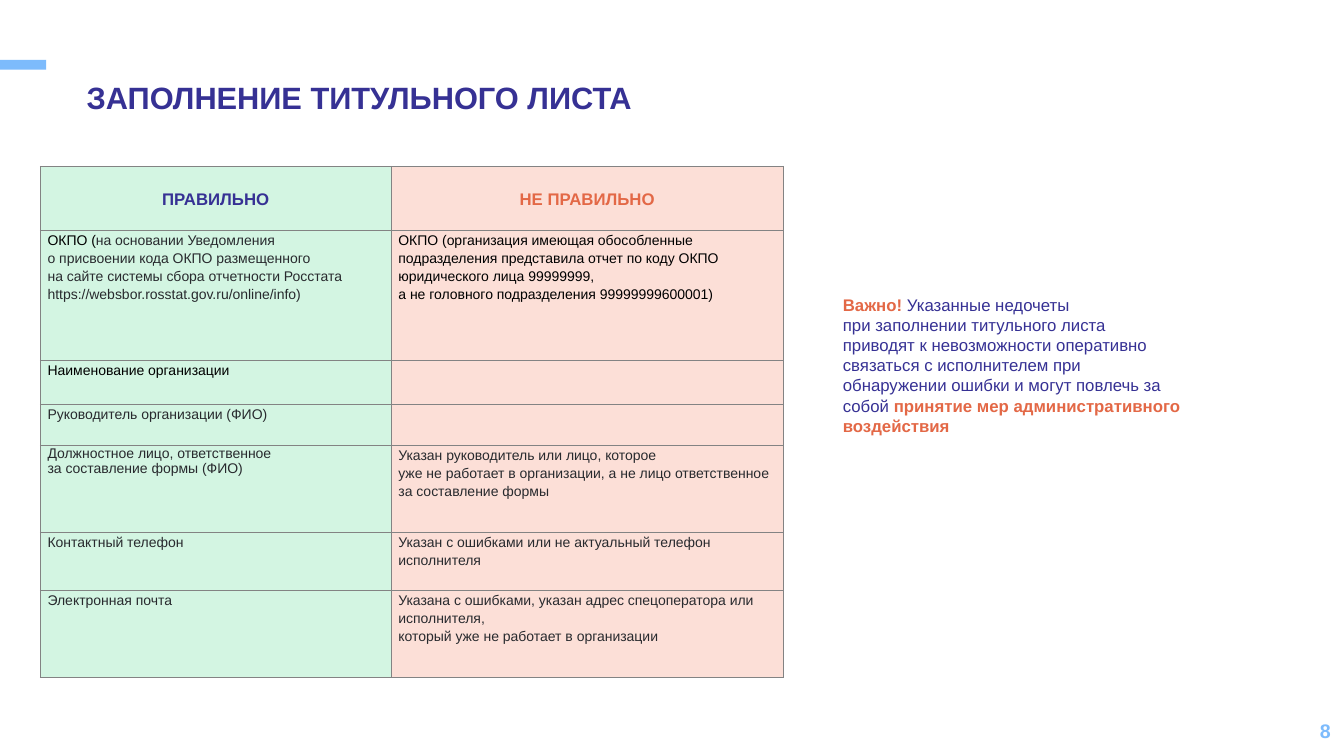
from pptx import Presentation
from pptx.dml.color import RGBColor
from pptx.enum.shapes import MSO_SHAPE
from pptx.enum.text import MSO_ANCHOR, PP_ALIGN
from pptx.oxml import parse_xml
from pptx.oxml.ns import nsdecls
from pptx.util import Pt

FONT = "Arial"
NAVY, ORANGE, SKY = "363194", "E36846", "7DBBFC"
BLACK, DARK, GREY = "000000", "282A2E", "838383"
GREEN, PINK = "D3F5E2", "FCDFD7"

COL_WIDTHS = [250.6, 280.1]
ROW_HEIGHTS = [46.1, 92.9, 31, 29.5, 61.9, 41.8, 61.9]
ROWS = [
    ([("ОКПО (", BLACK),
      ("на основании Уведомления\nо присвоении кода ОКПО размещенного\n"
       "на сайте системы сбора отчетности Росстата "
       "https://websbor.rosstat.gov.ru/online/info)", DARK)],
     [("ОКПО (организация имеющая обособленные подразделения представила "
       "отчет по коду ОКПО юридического лица 99999999,\n"
       "а не головного подразделения 99999999600001)", BLACK)]),
    ([("Наименование организации", BLACK)], []),
    ([("Руководитель организации (ФИО)", DARK)], []),
    ([("Должностное лицо, ответственное\nза составление формы (ФИО)", DARK)],
     [("Указан руководитель или лицо, которое\nуже не работает в организации, "
       "а не лицо ответственное за составление формы", DARK)]),
    ([("Контактный телефон", DARK)],
     [("Указан с ошибками или не актуальный телефон исполнителя", DARK)]),
    ([("Электронная почта", DARK)],
     [("Указана с ошибками, указан адрес спецоператора или исполнителя,\n"
       "который уже не работает в организации", DARK)]),
]


def rgb(value):
    return RGBColor.from_string(value)


def add_text(p, text, size=10, color=DARK, bold=False):
    for i, line in enumerate(text.split("\n")):
        if i:
            p.add_line_break()
        r = p.add_run()
        r.text = line
        r.font.name = FONT
        r.font.size = Pt(size)
        r.font.bold = bold
        r.font.color.rgb = rgb(color)


def place(sp, left, top, width, height):
    sp.left, sp.top, sp.width, sp.height = map(Pt, (left, top, width, height))


def add_title(s, text):
    sp = s.shapes.title
    place(sp, 54.7, 52.6, 590.4, 33.8)
    tf = sp.text_frame
    tf.word_wrap = True
    tf.vertical_anchor = MSO_ANCHOR.TOP
    p = tf.paragraphs[0]
    p.alignment = PP_ALIGN.LEFT
    add_text(p, text, size=22, color=NAVY, bold=True)


def add_bar(s):
    sp = s.shapes.add_shape(MSO_SHAPE.RECTANGLE, 0, Pt(42.8), Pt(33), Pt(6.9))
    sp.shadow.inherit = False
    sp.fill.solid()
    sp.fill.fore_color.rgb = rgb(SKY)
    sp.line.fill.background()


def add_box(s, box, runs, align=PP_ALIGN.LEFT, anchor=MSO_ANCHOR.TOP):
    sp = s.shapes.add_textbox(*map(Pt, box))
    tf = sp.text_frame
    tf.word_wrap = True
    tf.vertical_anchor = anchor
    p = tf.paragraphs[0]
    p.alignment = align
    for text, style in runs:
        add_text(p, text, **style)


def set_borders(cell, color, width):
    tcPr = cell._tc.get_or_add_tcPr()
    for i, side in enumerate(("lnL", "lnR", "lnT", "lnB")):
        tcPr.insert(i, parse_xml(
            f'<a:{side} {nsdecls("a")} w="{Pt(width)}"><a:solidFill>'
            f'<a:srgbClr val="{color}"/></a:solidFill></a:{side}>'))


def fill_cell(cell, runs, fill, header=False, spacing=1.15):
    cell.fill.solid()
    cell.fill.fore_color.rgb = rgb(fill)
    set_borders(cell, GREY, 0.75)
    cell.margin_left = cell.margin_right = Pt(5.2)
    cell.margin_top = cell.margin_bottom = 0
    cell.vertical_anchor = MSO_ANCHOR.MIDDLE if header else MSO_ANCHOR.TOP
    p = cell.text_frame.paragraphs[0]
    p.font.size = Pt(10)
    p.line_spacing = spacing
    if header:
        p.alignment = PP_ALIGN.CENTER
    for text, color in runs:
        add_text(p, text, size=12 if header else 10, color=color, bold=header)


def add_comparison(s):
    frame = s.shapes.add_table(len(ROW_HEIGHTS), 2, Pt(28.8), Pt(118.8),
                               Pt(sum(COL_WIDTHS)), Pt(sum(ROW_HEIGHTS)))
    table = frame.table
    for col, width in zip(table.columns, COL_WIDTHS):
        col.width = Pt(width)
    for row, height in zip(table.rows, ROW_HEIGHTS):
        row.height = Pt(height)
    header = ([("ПРАВИЛЬНО", NAVY)], [("НЕ ПРАВИЛЬНО", ORANGE)])
    for i, row in enumerate([header] + ROWS):
        for j, (runs, fill) in enumerate(zip(row, (GREEN, PINK))):
            spacing = 1.0 if (i, j) == (4, 0) else 1.15
            fill_cell(table.cell(i, j), runs, fill, i == 0, spacing)


def main():
    prs = Presentation()
    prs.slide_width, prs.slide_height = Pt(960), Pt(540)
    s = prs.slides.add_slide(prs.slide_layouts[5])
    add_bar(s)
    add_title(s, "ЗАПОЛНЕНИЕ ТИТУЛЬНОГО ЛИСТА")
    add_comparison(s)
    accent = dict(size=12, color=ORANGE, bold=True)
    add_box(s, (595, 206.8, 256.3, 108.7), [
        ("Важно! ", accent),
        ("Указанные недочеты\nпри заполнении титульного листа приводят "
         "к невозможности оперативно связаться с исполнителем при обнаружении "
         "ошибки и могут повлечь за собой ", dict(size=12, color=NAVY)),
        ("принятие мер административного воздействия", accent),
    ])
    add_box(s, (734.4, 507.6, 223.2, 28.8),
            [("8", dict(size=14, color=SKY, bold=True))],
            align=PP_ALIGN.RIGHT, anchor=MSO_ANCHOR.MIDDLE)
    prs.save("out.pptx")


if __name__ == "__main__":
    main()
